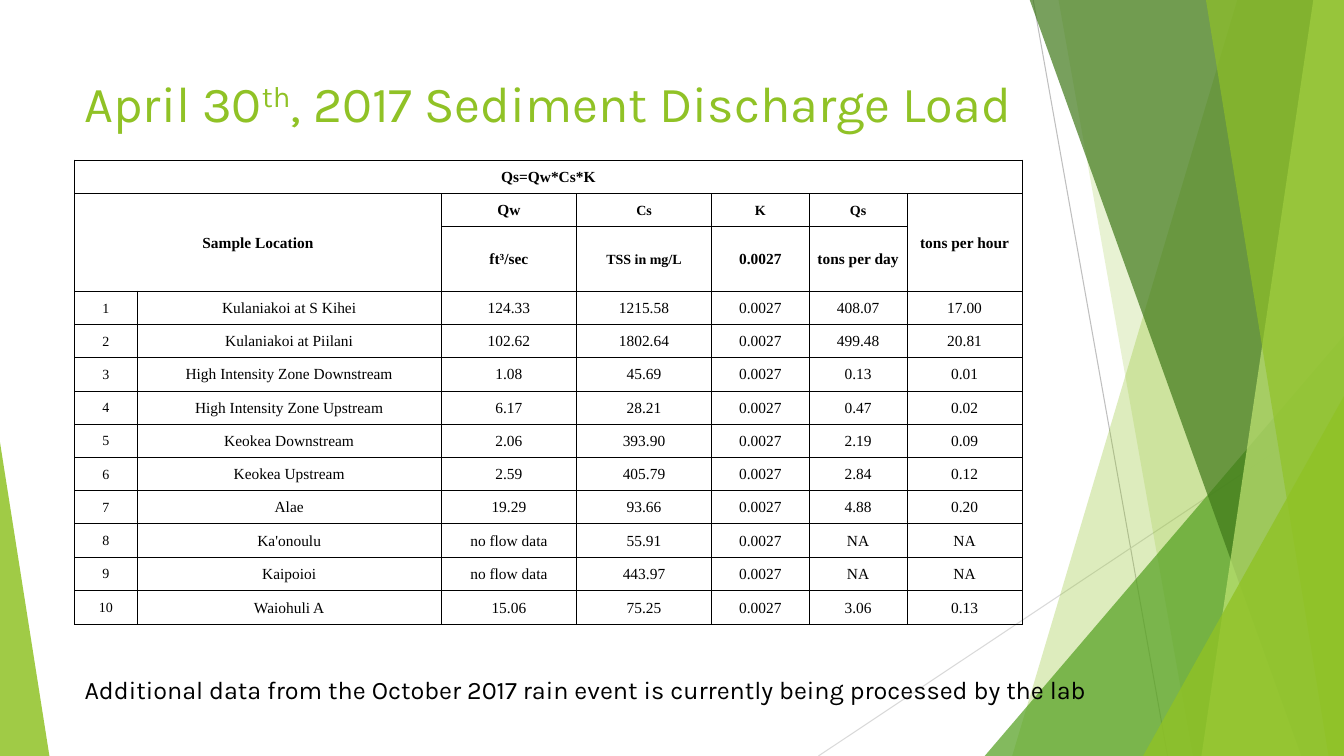
"""Build the sediment discharge load slide."""
from lxml import etree
from pptx import Presentation, dml, util as u
from pptx.dml import color
from pptx.enum import shapes, text
from pptx.oxml import ns

Pt = u.Pt
W, H = 960, 540
GREEN, LEAF, FOREST, LIME, BLACK = "90C226", "54A021", "3F7819", "C0E474", "000000"

TITLE = [("April 30", 0), ("th", 30000), (", 2017 Sediment Discharge Load", 0)]
NOTE = [("Additional data from the October 2017 rain event is currently being processed by the lab", 0)]

K = "0.0027"
HEADER = [
    ["Qs=Qw*Cs*K", "", "", "", "", "", ""],
    ["Sample Location", "", "Qw", "Cs", "K", "Qs", "tons per hour"],
    ["", "", "ft³/sec", "TSS in mg/L", K, "tons per day", ""],
]
SAMPLES = [
    ("Kulaniakoi at S Kihei", "124.33", "1215.58", "408.07", "17.00"),
    ("Kulaniakoi at Piilani", "102.62", "1802.64", "499.48", "20.81"),
    ("High Intensity Zone Downstream", "1.08", "45.69", "0.13", "0.01"),
    ("High Intensity Zone Upstream", "6.17", "28.21", "0.47", "0.02"),
    ("Keokea Downstream", "2.06", "393.90", "2.19", "0.09"),
    ("Keokea Upstream", "2.59", "405.79", "2.84", "0.12"),
    ("Alae", "19.29", "93.66", "4.88", "0.20"),
    ("Ka'onoulu", "no flow data", "55.91", "NA", "NA"),
    ("Kaipoioi", "no flow data", "443.97", "NA", "NA"),
    ("Waiohuli A", "15.06", "75.25", "3.06", "0.13"),
]
MERGES = [((0, 0), (0, 6)), ((1, 0), (2, 1)), ((1, 6), (2, 6))]
SMALL_HEADS = {"Cs", "K", "Qs", "TSS in mg/L"}
COL_WIDTHS = [44.6, 217.4, 96.5, 96.5, 69.8, 69.8, 82.4]
ROW_HEIGHT, UNITS_HEIGHT, LAST_HEIGHT = 23.75, 46.1, 24.8

LINES = [((738, 0), (834, H), "BFBFBF"), ((W, 290), (584.6, H), "D9D9D9")]
BANDS = [
    ("band", (884, 723), GREEN, 30),
    ("band", (756, 852), GREEN, 20),
    ("triangle", (703.4, 239.8, 256.6, 300.2, 1), LEAF, 72),
    ("band", (735.3, 929.5), FOREST, 70),
    ("band", (938.2, 858.2), LIME, 70),
    ("band", (861.3, 949), GREEN, 65),
    ("triangle", (816.5, 283, 143.5, 257, 1), GREEN, 80),
    ("triangle", (0, 316, 35.3, 224, 0), GREEN, 85),
]


def rgb(value):
    return color.RGBColor.from_string(value)


def paint(sp, value, opacity):
    sp.shadow.inherit = False
    sp.line.fill.background()
    sp.fill.solid()
    sp.fill.fore_color.rgb = rgb(value)
    clr = sp._element.spPr.find(".//" + ns.qn("a:srgbClr"))
    etree.SubElement(clr, ns.qn("a:alpha"), val=str(opacity * 1000))


def add_line(s, start, end, value):
    line = s.shapes.add_connector(shapes.MSO_CONNECTOR.STRAIGHT, *map(Pt, start + end))
    line.line.color.rgb = rgb(value)
    line.line.width = Pt(0.75)
    etree.SubElement(line._element.spPr, ns.qn("a:effectLst"))


def add_band(s, top_x, bottom_x):
    outline = s.shapes.build_freeform(Pt(top_x), Pt(-0.7))
    corners = [(W, -0.7), (W, H), (bottom_x, H)]
    outline.add_line_segments([(Pt(x), Pt(y)) for x, y in corners], close=True)
    return outline.convert_to_shape()


def add_triangle(s, x, y, w, h, apex):
    sp = s.shapes.add_shape(shapes.MSO_SHAPE.ISOSCELES_TRIANGLE, Pt(x), Pt(y), Pt(w), Pt(h))
    sp.adjustments[0] = apex
    return sp


def add_run(p, words, font, size, value, bold=False, baseline=0):
    r = p.add_run()
    r.text = words
    r.font.name, r.font.size, r.font.bold = font, Pt(size), bold
    r.font.color.rgb = rgb(value)
    if baseline:
        r._r.get_or_add_rPr().set("baseline", str(baseline))


def add_text(s, box, runs, size, value, wrap):
    tf = s.shapes.add_textbox(*map(Pt, box)).text_frame
    tf.word_wrap = wrap
    for words, baseline in runs:
        add_run(tf.paragraphs[0], words, "Karla", size, value, baseline=baseline)


def set_borders(cell, widths):
    tc_pr = cell._tc.get_or_add_tcPr()
    for i, (side, width) in enumerate(zip("LRTB", widths)):
        ln = etree.Element(ns.qn("a:ln" + side), w=str(Pt(width)))
        fill = etree.SubElement(ln, ns.qn("a:solidFill"))
        etree.SubElement(fill, ns.qn("a:srgbClr"), val=BLACK)
        tc_pr.insert(i, ln)


def add_load_table(s):
    rows = HEADER + [[str(n), place, qw, cs, K, qs, hourly]
                     for n, (place, qw, cs, qs, hourly) in enumerate(SAMPLES, 1)]
    heights = [ROW_HEIGHT] * len(rows)
    heights[2], heights[-1] = UNITS_HEIGHT, LAST_HEIGHT
    table = s.shapes.add_table(len(rows), len(COL_WIDTHS), Pt(53.3), Pt(114.5),
                               Pt(sum(COL_WIDTHS)), Pt(sum(heights))).table
    table.first_row = table.horz_banding = False
    for col, width in zip(table.columns, COL_WIDTHS):
        col.width = Pt(width)
    for row, height in zip(table.rows, heights):
        row.height = Pt(height)
    head, last_row, last_col = len(HEADER), len(rows) - 1, len(COL_WIDTHS) - 1
    for i, row in enumerate(rows):
        for j, words in enumerate(row):
            cell = table.cell(i, j)
            cell.fill.background()
            cell.margin_left = cell.margin_right = cell.margin_top = Pt(0.7)
            cell.margin_bottom = 0
            cell.vertical_anchor = text.MSO_ANCHOR.MIDDLE
            outer = (j == 0, j == last_col, i in (0, head), i in (head - 1, last_row))
            set_borders(cell, [1 if edge else 0.5 for edge in outer])
            if words:
                p = cell.text_frame.paragraphs[0]
                p.alignment = text.PP_ALIGN.CENTER
                small = words in SMALL_HEADS or (i >= head and j == 0)
                add_run(p, words, "Times New Roman", 10 if small else 11, BLACK, bold=i < head)
    for first, last in MERGES:
        table.cell(*first).merge(table.cell(*last))


def main():
    prs = Presentation()
    prs.slide_width, prs.slide_height = Pt(W), Pt(H)
    s = prs.slides.add_slide(prs.slide_layouts[6])
    for line in LINES:
        add_line(s, *line)
    builders = {"band": add_band, "triangle": add_triangle}
    for kind, place, value, opacity in BANDS:
        paint(builders[kind](s, *place), value, opacity)
    add_text(s, (53.3, 48.2, 677, 103.7), TITLE, 36, GREEN, True)
    add_load_table(s)
    add_text(s, (53.3, 478, 735, 29), NOTE, 18, BLACK, False)
    prs.save("out.pptx")


if __name__ == "__main__":
    main()
